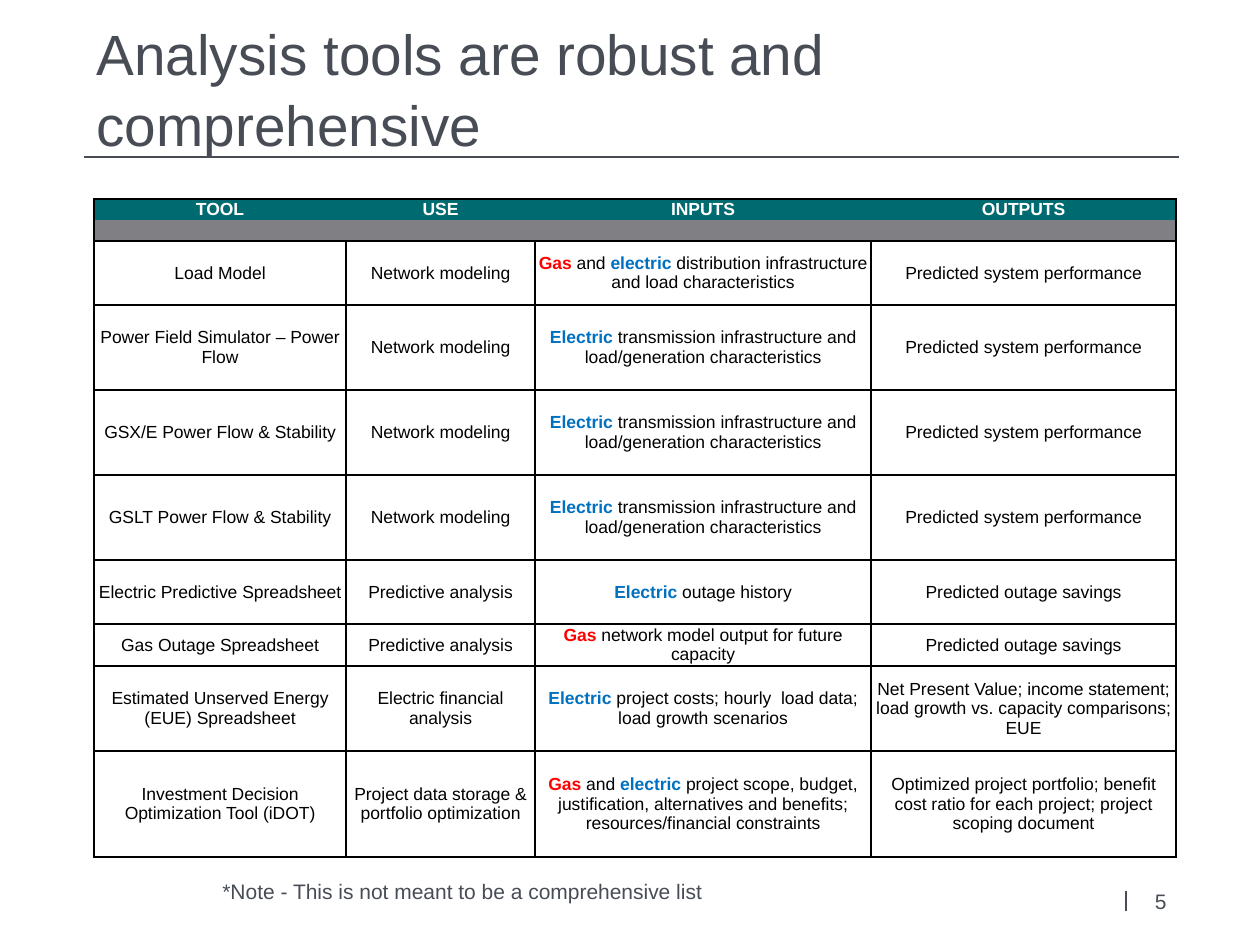
"""Build the slide that lists the analysis tools with their uses, inputs and outputs."""
from typing import NamedTuple

from lxml.etree import SubElement
from pptx import Presentation
from pptx.dml.color import RGBColor
from pptx.enum.shapes import MSO_CONNECTOR as Connector
from pptx.enum.text import MSO_ANCHOR as Anchor, MSO_AUTO_SIZE as AutoSize, PP_ALIGN as Align
from pptx.oxml.ns import qn
from pptx.util import Emu, Pt

PX_PER_INCH = 126
FONT = "Arial"
SLATE = RGBColor(0x47, 0x4C, 0x55)
TEAL = RGBColor(0x00, 0x6A, 0x71)
GRAY = RGBColor(0x80, 0x7F, 0x83)
WHITE = RGBColor(0xFF, 0xFF, 0xFF)
BLACK = RGBColor(0x00, 0x00, 0x00)
RED = RGBColor(0xFF, 0x00, 0x00)
BLUE = RGBColor(0x00, 0x70, 0xC0)
SIDES = "LRTB"


class Span(NamedTuple):
    text: str
    color: RGBColor = BLACK
    bold: bool = False


class Area(NamedTuple):
    left: int
    top: int
    width: int
    height: int


class Tool(NamedTuple):
    height: int
    name: str
    use: str
    inputs: tuple[Span, ...]
    outputs: str


GAS = Span("Gas", RED, True)
ELECTRIC = Span("Electric", BLUE, True)
BOTH = (GAS, Span(" and "), Span("electric", BLUE, True))
NETWORK = "Network modeling"
PREDICTIVE = "Predictive analysis"
PERFORMANCE = "Predicted system performance"
SAVINGS = "Predicted outage savings"
TRANSMISSION = (ELECTRIC, Span(" transmission infrastructure and load/generation characteristics"))

HEADINGS = ("TOOL", "USE", "INPUTS", "OUTPUTS")
COLUMN_WIDTHS = (252, 189, 336, 305)
HEADER_HEIGHT = 21
TOOLS = (
    Tool(64, "Load Model", NETWORK,
         (*BOTH, Span(" distribution infrastructure and load characteristics")), PERFORMANCE),
    Tool(85, "Power Field Simulator – Power Flow", NETWORK, TRANSMISSION, PERFORMANCE),
    Tool(85, "GSX/E Power Flow & Stability", NETWORK, TRANSMISSION, PERFORMANCE),
    Tool(85, "GSLT Power Flow & Stability", NETWORK, TRANSMISSION, PERFORMANCE),
    Tool(64, "Electric Predictive Spreadsheet", PREDICTIVE,
         (ELECTRIC, Span(" outage history")), SAVINGS),
    Tool(42, "Gas Outage Spreadsheet", PREDICTIVE,
         (GAS, Span(" network model output for future capacity")), SAVINGS),
    Tool(85, "Estimated Unserved Energy (EUE) Spreadsheet", "Electric financial analysis",
         (ELECTRIC, Span(" project costs; hourly  load data; load growth scenarios")),
         "Net Present Value; income statement; load growth vs. capacity comparisons; EUE"),
    Tool(106, "Investment Decision Optimization Tool (iDOT)",
         "Project data storage & portfolio optimization",
         (*BOTH, Span(" project scope, budget, justification, alternatives and benefits; "
                      "resources/financial constraints")),
         "Optimized project portfolio; benefit cost ratio for each project; "
         "project scoping document"),
)


def px(length: int) -> Emu:
    """Turn pixels into EMU."""
    return Emu(round(length * 914400 / PX_PER_INCH))


def add_spans(para, spans: tuple[Span, ...], size: float, align: Align) -> None:
    """Write the spans into a paragraph, one run each."""
    para.alignment = align
    for span in spans:
        run = para.add_run()
        run.text = span.text
        run.font.name = FONT
        run.font.size = Pt(size)
        run.font.bold = span.bold
        run.font.color.rgb = span.color


def add_text(page, area: Area, text: str, align: Align, anchor: Anchor) -> None:
    """Add a small slate text box."""
    box = page.shapes.add_textbox(*map(px, area))
    box.text_frame.word_wrap = True
    box.text_frame.vertical_anchor = anchor
    add_spans(box.text_frame.paragraphs[0], (Span(text, SLATE),), 12, align)


def add_line(page, start: tuple[int, int], end: tuple[int, int]) -> None:
    """Add a thin slate line without a shadow."""
    line = page.shapes.add_connector(Connector.STRAIGHT, *map(px, start + end))
    line.line.color.rgb = SLATE
    line.line.width = Pt(0.75)
    SubElement(line._element.spPr, qn("a:effectLst"))


def set_borders(cell, shown: str) -> None:
    """Draw the shown sides of a cell in black and hide the others."""
    properties = cell._tc.get_or_add_tcPr()
    for side in SIDES:
        edge = SubElement(properties, qn(f"a:ln{side}"), w=str(Pt(1)))
        if side in shown:
            fill = SubElement(edge, qn("a:solidFill"))
            SubElement(fill, qn("a:srgbClr"), val=str(BLACK))
        else:
            SubElement(edge, qn("a:noFill"))


def format_cell(cell, spans: tuple[Span, ...], sides: str, fill: RGBColor | None = None) -> None:
    """Set the text, borders and fill of a cell."""
    cell.margin_left = cell.margin_right = px(2)
    cell.margin_top = cell.margin_bottom = 0
    cell.vertical_anchor = Anchor.MIDDLE
    para = cell.text_frame.paragraphs[0]
    add_spans(para, spans, 10, Align.CENTER)
    if not spans:
        SubElement(para._p, qn("a:endParaRPr"), sz="1000")
    set_borders(cell, sides)
    if fill is None:
        cell.fill.background()
    else:
        cell.fill.solid()
        cell.fill.fore_color.rgb = fill


def add_tool_table(page, left: int, top: int) -> None:
    """Add the table with its header, gray band and tool rows."""
    heights = (HEADER_HEIGHT, HEADER_HEIGHT, *(tool.height for tool in TOOLS))
    area = Area(left, top, sum(COLUMN_WIDTHS), sum(heights))
    table = page.shapes.add_table(len(heights), len(COLUMN_WIDTHS), *map(px, area)).table
    table.first_row = table.horz_banding = False
    for column, width in zip(table.columns, COLUMN_WIDTHS):
        column.width = px(width)
    for row, height in zip(table.rows, heights):
        row.height = px(height)

    last = len(HEADINGS) - 1
    for index, heading in enumerate(HEADINGS):
        outer = {0: "L", last: "R"}.get(index, "")
        format_cell(table.cell(0, index), (Span(heading, WHITE, True),), "T" + outer, TEAL)
        format_cell(table.cell(1, index), (), "LRB", GRAY)
    table.cell(1, 0).merge(table.cell(1, last))

    for row, tool in enumerate(TOOLS, start=2):
        contents = ((Span(tool.name),), (Span(tool.use),), tool.inputs, (Span(tool.outputs),))
        for column, spans in enumerate(contents):
            format_cell(table.cell(row, column), spans, SIDES)


def set_title(page, area: Area, text: str) -> None:
    """Place and format the title placeholder."""
    title = page.shapes.title
    title.left, title.top, title.width, title.height = map(px, area)
    frame = title.text_frame
    frame.word_wrap = True
    frame.auto_size = AutoSize.NONE
    frame.vertical_anchor = Anchor.MIDDLE
    para = frame.paragraphs[0]
    para.line_spacing = 1.04
    add_spans(para, (Span(text, SLATE),), 32.4, Align.LEFT)


def main() -> None:
    """Build and save the deck."""
    deck = Presentation()
    deck.slide_width, deck.slide_height = px(1260), px(945)
    page = deck.slides.add_slide(deck.slide_layouts[5])
    add_text(page, Area(1126, 876, 53, 50), "5", Align.RIGHT, Anchor.MIDDLE)
    add_line(page, (1126, 891), (1126, 911))
    add_line(page, (84, 157), (1179, 157))
    set_title(page, Area(84, 38, 1095, 98), "Analysis tools are robust and comprehensive")
    add_tool_table(page, 94, 199)
    add_text(page, Area(210, 872, 756, 38),
             "*Note - This is not meant to be a comprehensive list", Align.LEFT, Anchor.TOP)
    deck.save("out.pptx")


if __name__ == "__main__":
    main()
